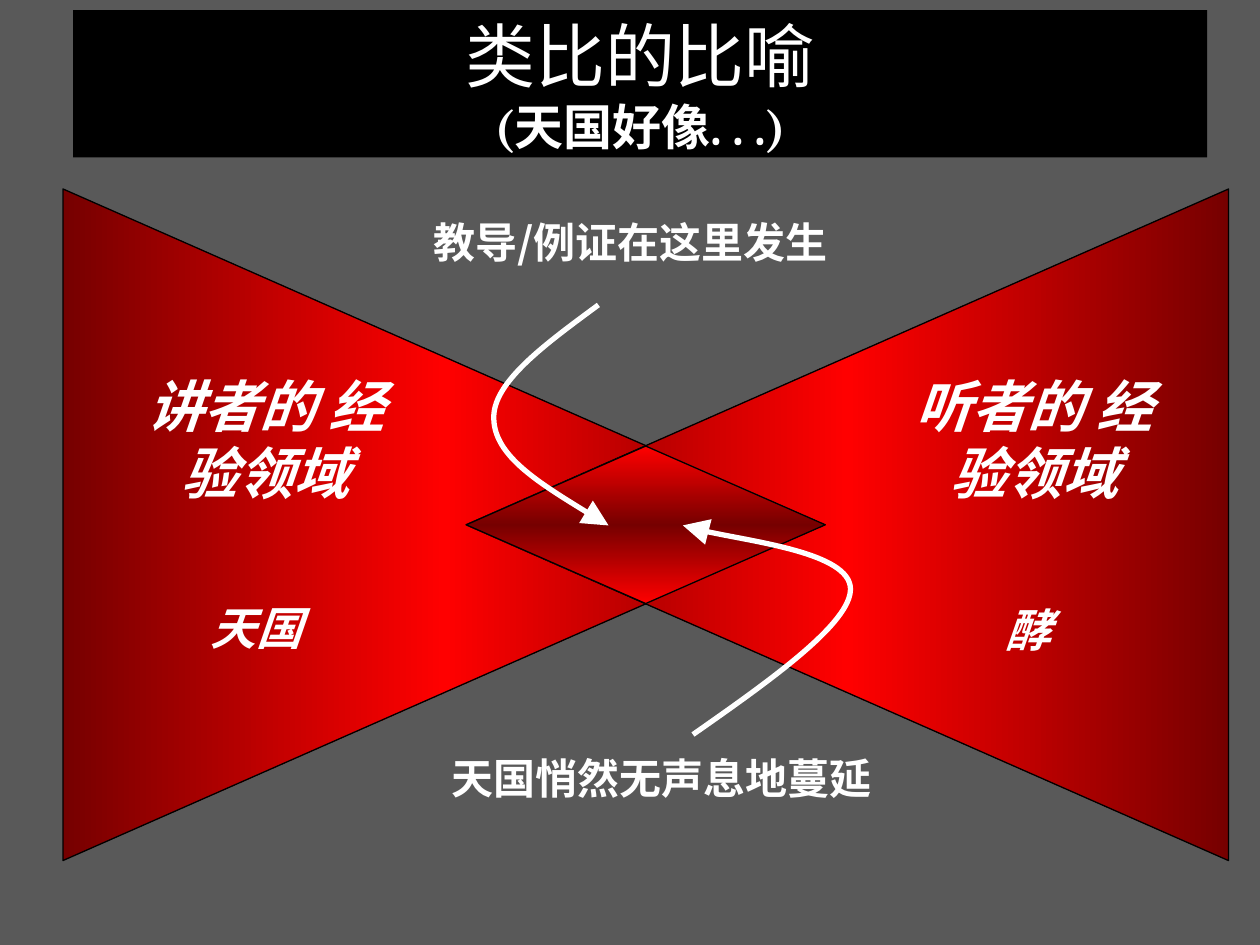
from lxml import etree
from pptx import Presentation
from pptx import util as u
from pptx.dml.color import RGBColor
from pptx.enum import shapes, text
from pptx.oxml import parse_xml
from pptx.oxml.ns import nsdecls, qn

COLORS = {"background": "595959", "bright": "FF0000", "dark": "760000",
          "black": "000000", "white": "FFFFFF"}
SANS, LATIN, SERIF = "Noto Sans CJK SC", "Arial", "Cambria"

# Content: lengths in inches as left, top, width, height
TITLE = [("类比的比喻", 40, SANS, False), ("(天国好像. . .)", 28, SERIF, True)]
TITLE_BOX = (0.58, 0.08, 9, 1.17)
TRIANGLES = [((0.86, 1.14, 5.33, 6.05), 90), ((4.06, 1.14, 5.33, 6.05), 270)]
DIAMOND = (3.7, 3.54, 2.85, 1.25)
LABELS = [  # text, box, size, font, italic
    ("讲者的 经验领域", (0.97, 2.9, 2.28, 1.18), 32, LATIN, True),
    ("天国", (1.12, 4.71, 1.83, 0.54), 26, SANS, True),
    ("听者的 经验领域", (7.07, 2.9, 2.28, 1.18), 32, LATIN, True),
    ("酵", (7.25, 4.73, 1.83, 0.54), 26, SANS, True),
    ("教导/例证在这里发生", (2.92, 1.67, 4.17, 0.51), 24, SANS, False),
    ("天国悄然无声息地蔓延", (3.25, 5.92, 4, 0.51), 24, SERIF, False),
]
CURVES = [  # hundredths of an inch: start, then two controls and an end per segment
    [(475, 242), (433, 273), (390, 304), (392, 333),
     (393, 362), (438, 390), (483, 417)],
    [(550, 583), (613, 539), (676, 494), (675, 467),
     (674, 439), (564, 425), (542, 417)],
]


def color(name):
    return RGBColor.from_string(COLORS[name])


def inches(box):
    return [u.Inches(value) for value in box]


def set_line(shape, name, width):
    shape.shadow.inherit = False
    shape.line.color.rgb = color(name)
    shape.line.width = u.Pt(width)


def add_gradient_shape(slide, kind, box, edge, middle, rotation=0):
    shape = slide.shapes.add_shape(kind, *inches(box))
    shape.rotation = rotation
    set_line(shape, "black", 0.75)
    stops = "".join(
        f'<a:gs pos="{position}"><a:srgbClr val="{COLORS[name]}"/></a:gs>'
        for position, name in ((0, edge), (50000, middle), (100000, edge)))
    gradient = parse_xml(
        f'<a:gradFill {nsdecls("a")} rotWithShape="1"><a:gsLst>{stops}</a:gsLst>'
        '<a:lin ang="5400000" scaled="0"/></a:gradFill>')
    shape._element.spPr.find(qn("a:prstGeom")).addnext(gradient)


def add_label(slide, words, box, size, font, italic):
    frame = slide.shapes.add_textbox(*inches(box)).text_frame
    frame.word_wrap = True
    frame.auto_size = text.MSO_AUTO_SIZE.SHAPE_TO_FIT_TEXT
    paragraph = frame.paragraphs[0]
    paragraph.text = words
    paragraph.alignment = text.PP_ALIGN.CENTER
    paragraph.font.size = u.Pt(size)
    paragraph.font.name = font
    paragraph.font.bold = True
    paragraph.font.italic = italic
    paragraph.font.color.rgb = color("white")


def add_curved_arrow(slide, points):
    builder = slide.shapes.build_freeform(*points[0], scale=u.Inches(0.01))
    builder.add_line_segments(points[1:], close=False)
    shape = builder.convert_to_shape()
    shape.fill.background()
    set_line(shape, "white", 3)
    # Turn each three straight segments into one cubic curve
    outline = shape._element.spPr.find(".//" + qn("a:path"))
    segments = outline.findall(qn("a:lnTo"))
    for start in range(0, len(segments), 3):
        curve = etree.SubElement(outline, qn("a:cubicBezTo"))
        for segment in segments[start:start + 3]:
            curve.append(segment[0])
            outline.remove(segment)
    etree.SubElement(shape.line._get_or_add_ln(), qn("a:tailEnd"),
                     type="triangle", w="lg", len="lg")


def fill_title(title):
    title.left, title.top, title.width, title.height = inches(TITLE_BOX)
    title.fill.solid()
    title.fill.fore_color.rgb = color("black")
    frame = title.text_frame
    frame.auto_size = text.MSO_AUTO_SIZE.NONE
    frame.vertical_anchor = text.MSO_ANCHOR.MIDDLE
    paragraph = frame.paragraphs[0]
    paragraph.alignment = text.PP_ALIGN.CENTER
    for index, (words, size, font, bold) in enumerate(TITLE):
        if index:
            paragraph.add_line_break()
        run = paragraph.add_run()
        run.text = words
        run.font.size = u.Pt(size)
        run.font.name = font
        run.font.bold = bold
        run.font.color.rgb = color("white")


def main():
    presentation = Presentation()
    presentation.slide_width, presentation.slide_height = inches((10, 7.5))
    slide = presentation.slides.add_slide(presentation.slide_layouts[5])
    slide.background.fill.solid()
    slide.background.fill.fore_color.rgb = color("background")

    # Two overlapping fields of experience
    for box, rotation in TRIANGLES:
        add_gradient_shape(slide, shapes.MSO_SHAPE.ISOSCELES_TRIANGLE, box,
                           "dark", "bright", rotation)
    add_gradient_shape(slide, shapes.MSO_SHAPE.DIAMOND, DIAMOND, "bright", "dark")

    # Title, labels and arrows
    fill_title(slide.shapes.title)
    for label in LABELS:
        add_label(slide, *label)
    for points in CURVES:
        add_curved_arrow(slide, points)
    presentation.save("out.pptx")


if __name__ == "__main__":
    main()
